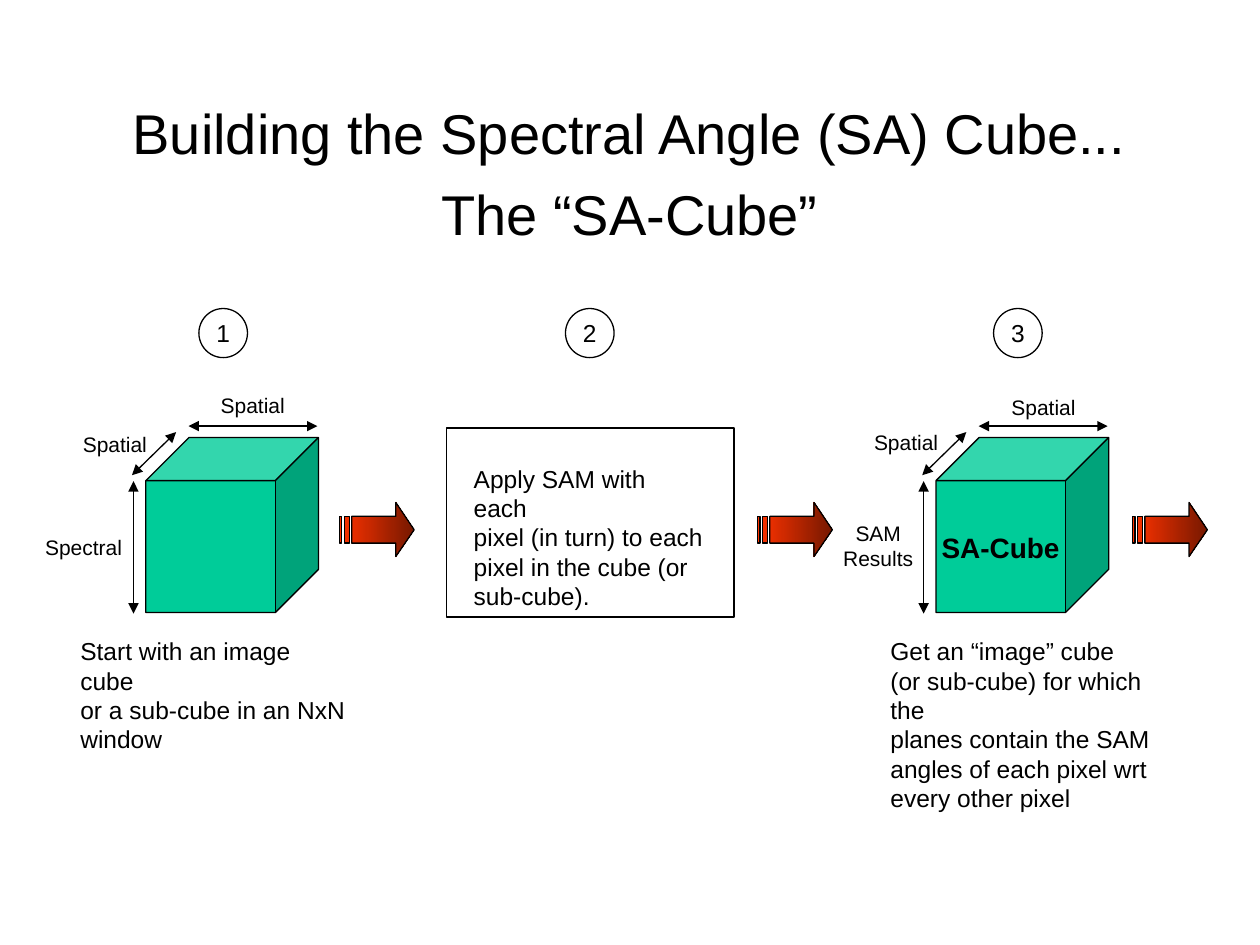
from dataclasses import dataclass

from lxml.etree import SubElement
from pptx import Presentation
from pptx.dml.color import RGBColor
from pptx.enum.shapes import MSO_CONNECTOR as Connector, MSO_SHAPE as Preset
from pptx.enum.text import MSO_ANCHOR as Anchor, PP_ALIGN as Align
from pptx.oxml.ns import qn
from pptx.util import Cm, Pt

BLACK = RGBColor(0x00, 0x00, 0x00)
GREEN = RGBColor(0x00, 0xCC, 0x99)
RED = RGBColor(0xFF, 0x33, 0x00)
DARK_RED = RGBColor(0x76, 0x18, 0x00)
FONT = "Arial"
LINE_WIDTH = Pt(0.75)
HUNDREDTH = Cm(0.01)
CUBE_TOP = 8.82
ARROW_TOP = 10.13

ARROW_CONTOURS = [
    [(114, 0), (114, 28), (25, 28), (25, 82), (114, 82), (114, 109), (151, 55)],
    [(10, 28), (10, 82), (20, 82), (20, 28)],
    [(0, 28), (0, 82), (5, 82), (5, 28)],
]


@dataclass
class Label:
    left: float
    top: float
    width: float
    height: float
    lines: list[str]
    size: int = 14
    align: Align = Align.LEFT
    wrap: bool = False
    bold: bool = False
    spacing: float = 1.0


CUBE_LEFTS = [2.94, 18.87]
ARROW_LEFTS = [6.84, 15.27, 22.83]
STEP_LEFTS = [4.01, 11.4, 20.03]
LABELS = [
    Label(2.41, 1.6, 20.57, 3.51,
          ["Building the Spectral Angle (SA) Cube...", "The “SA-Cube”"],
          32, Align.CENTER, spacing=1.2),
    Label(1.42, 8.57, 1.8, 0.76, ["Spatial"], 12),
    Label(4.2, 7.78, 1.8, 0.76, ["Spatial"], 12),
    Label(0.66, 10.66, 2.06, 0.76, ["Spectral"], 12),
    Label(1.37, 12.7, 5.89, 2.03,
          ["Start with an image cube", "or a sub-cube in an NxN", "window"], wrap=True),
    Label(9.3, 9.22, 5.14, 2.62,
          ["Apply SAM with each", "pixel (in turn) to each",
           "pixel in the cube (or", "sub-cube)."], wrap=True),
    Label(17.37, 8.54, 1.8, 0.76, ["Spatial"], 12),
    Label(20.14, 7.82, 1.8, 0.76, ["Spatial"], 12),
    Label(16.74, 10.36, 1.93, 1.27, ["SAM", "Results"], 12, Align.CENTER),
    Label(17.7, 12.7, 6.35, 3.2,
          ["Get an “image” cube", "(or sub-cube) for which the",
           "planes contain the SAM", "angles of each pixel wrt",
           "every other pixel"], wrap=True),
    Label(18.72, 10.57, 2.9, 0.94, ["SA-Cube"], 16, Align.CENTER, bold=True),
]


def add_line(paragraph, text: str, size: int, bold: bool = False) -> None:
    run = paragraph.add_run()
    run.text = text
    run.font.name = FONT
    run.font.size = Pt(size)
    run.font.bold = bold
    run.font.color.rgb = BLACK


def add_label(slide, label: Label) -> None:
    shape = slide.shapes.add_textbox(
        Cm(label.left), Cm(label.top), Cm(label.width), Cm(label.height))
    frame = shape.text_frame
    frame.word_wrap = label.wrap
    for index, text in enumerate(label.lines):
        paragraph = frame.add_paragraph() if index else frame.paragraphs[0]
        paragraph.alignment = label.align
        paragraph.line_spacing = label.spacing
        add_line(paragraph, text, label.size, label.bold)


def outline(shape) -> None:
    shape.shadow.inherit = False
    shape.line.color.rgb = BLACK
    shape.line.width = LINE_WIDTH


def add_preset(slide, preset: Preset, left: float, top: float,
               width: float, height: float):
    shape = slide.shapes.add_shape(preset, Cm(left), Cm(top), Cm(width), Cm(height))
    outline(shape)
    shape.fill.background()
    return shape


def add_striped_arrow(slide, left: float) -> None:
    origin_x, origin_y = round(left * 100), round(ARROW_TOP * 100)
    contours = [[(origin_x + x, origin_y + y) for x, y in contour]
                for contour in ARROW_CONTOURS]
    builder = slide.shapes.build_freeform(*contours[0][0], scale=HUNDREDTH)
    for index, contour in enumerate(contours):
        if index:
            builder.move_to(*contour[0])
        builder.add_line_segments(contour[1:], close=True)
    arrow = builder.convert_to_shape()
    outline(arrow)
    arrow.fill.gradient()
    arrow.fill.gradient_angle = 0
    for stop, position, color in zip(arrow.fill.gradient_stops, (0, 1), (RED, DARK_RED)):
        stop.position = position
        stop.color.rgb = color


def add_dimension(slide, x1: float, y1: float, x2: float, y2: float) -> None:
    connector = slide.shapes.add_connector(
        Connector.STRAIGHT, Cm(x1), Cm(y1), Cm(x2), Cm(y2))
    connector.line.color.rgb = BLACK
    connector.line.width = LINE_WIDTH
    line = connector.line._get_or_add_ln()
    for end in ("a:headEnd", "a:tailEnd"):
        SubElement(line, qn(end), type="triangle")
    SubElement(connector._element.spPr, qn("a:effectLst"))


def add_cube(slide, left: float) -> None:
    cube = add_preset(slide, Preset.CUBE, left, CUBE_TOP, 3.48, 3.53)
    cube.adjustments[0] = 0.25
    cube.fill.solid()
    cube.fill.fore_color.rgb = GREEN
    add_dimension(slide, left - 0.25, 9.7, left - 0.25, 12.37)
    add_dimension(slide, left + 0.86, 8.59, left + 3.46, 8.59)
    add_dimension(slide, left - 0.28, 9.58, left + 0.61, 8.71)


def add_step_number(slide, number: int, left: float) -> None:
    circle = add_preset(slide, Preset.OVAL, left, 6.22, 0.98, 0.99)
    frame = circle.text_frame
    frame.margin_left = frame.margin_right = frame.margin_top = frame.margin_bottom = 0
    frame.vertical_anchor = Anchor.MIDDLE
    frame.word_wrap = False
    frame.paragraphs[0].alignment = Align.CENTER
    add_line(frame.paragraphs[0], str(number), 14)


def main() -> None:
    presentation = Presentation()
    presentation.slide_width, presentation.slide_height = Cm(25.4), Cm(19.05)
    slide = presentation.slides.add_slide(presentation.slide_layouts[6])
    for left in CUBE_LEFTS:
        add_cube(slide, left)
    add_preset(slide, Preset.RECTANGLE, 9, 8.63, 5.8, 3.81)
    for number, left in enumerate(STEP_LEFTS, start=1):
        add_step_number(slide, number, left)
    for left in ARROW_LEFTS:
        add_striped_arrow(slide, left)
    for label in LABELS:
        add_label(slide, label)
    presentation.save("out.pptx")


if __name__ == "__main__":
    main()
